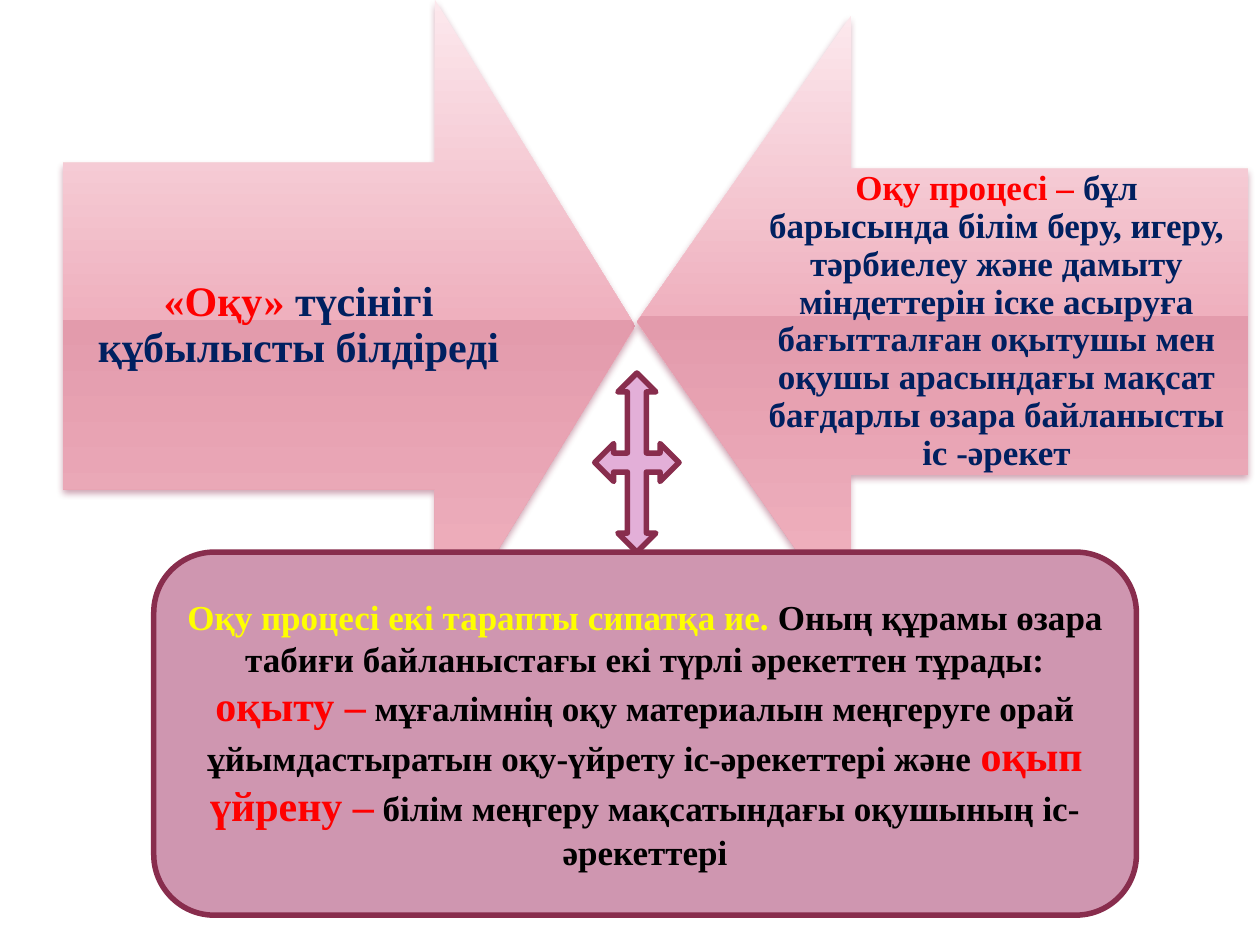
import lxml.etree
import pptx
import pptx.dml.color
import pptx.enum.shapes
import pptx.enum.text
import pptx.oxml
import pptx.oxml.ns
import pptx.util

Cm = pptx.util.Cm
Pt = pptx.util.Pt
SHAPES = pptx.enum.shapes.MSO_SHAPE

THEME = {
    "font": "Times New Roman",
    "large": Pt(24), "medium": Pt(20), "line": Pt(3.15),
    "red": "FF0000", "navy": "002060", "yellow": "FFFF00", "black": "000000",
    "panel": "CF96B0", "cross": "E3AFD8", "border": "882D4D", "shadow": "7F1238",
    "gradient": [(0, "FCE8ED"), (49, "EFB0BE"), (49, "E39BAC"), (92, "EFB0BE"), (100, "F0BEC9")],
}


def color(name):
    return pptx.dml.color.RGBColor.from_string(THEME[name])


def write_text(shape, runs, margin, line_spacing):
    frame = shape.text_frame
    frame_format = {
        "word_wrap": True, "vertical_anchor": pptx.enum.text.MSO_ANCHOR.MIDDLE,
        "margin_left": margin, "margin_right": margin,
    }
    if line_spacing != 1:
        frame_format.update(margin_top=margin, margin_bottom=margin)
    for name, value in frame_format.items():
        setattr(frame, name, value)
    paragraph = frame.paragraphs[0]
    paragraph.alignment = pptx.enum.text.PP_ALIGN.CENTER
    paragraph.line_spacing = line_spacing
    for text, size, color_name in runs:
        run = paragraph.add_run()
        run.text = text
        for name, value in {"name": THEME["font"], "size": THEME[size], "bold": True}.items():
            setattr(run.font, name, value)
        run.font.color.rgb = color(color_name)


presentation = pptx.Presentation()
presentation.slide_width = Cm(25.4)
presentation.slide_height = Cm(19.05)
slide = presentation.slides.add_slide(presentation.slide_layouts[6])

stops = "".join(
    f'<a:gs pos="{position * 1000}"><a:srgbClr val="{value}"/></a:gs>'
    for position, value in THEME["gradient"]
)
namespace = pptx.oxml.ns.nsdecls("a")
gradient_xml = (
    f'<a:gradFill {namespace} rotWithShape="0"><a:gsLst>{stops}</a:gsLst>'
    '<a:lin ang="5400000" scaled="0"/></a:gradFill>'
)
shadow_xml = (
    f'<a:effectLst {namespace}><a:outerShdw blurRad="50800" dist="25400" dir="5400000" '
    f'rotWithShape="0"><a:srgbClr val="{THEME["shadow"]}"><a:alpha val="38000"/>'
    '</a:srgbClr></a:outerShdw></a:effectLst>'
)

arrows = [
    {
        "box": (0.46, 0.81, 13.16, 11.53), "rotation": 270,
        "text_box": (1.27, 3.28, 9.5, 6.58), "margin": Cm(0.48),
        "runs": [
            ("«Оқу» ", "large", "red"),
            ("түсінігі құбылысты білдіреді", "large", "navy"),
        ],
    },
    {
        "box": (12.83, 0.33, 12.34, 12.32), "rotation": 90,
        "text_box": (15.01, 3.4, 10.16, 6.17), "margin": Cm(0.41),
        "runs": [
            ("Оқу процесі – ", "medium", "red"),
            ("бұл барысында білім беру, игеру, тəрбиелеу жəне дамыту міндеттерін іске асыруға "
             "бағытталған оқытушы мен оқушы арасындағы мақсат бағдарлы өзара байланысты "
             "іс -əрекет", "medium", "navy"),
        ],
    },
]
for arrow in arrows:
    shape = slide.shapes.add_shape(SHAPES.DOWN_ARROW, *map(Cm, arrow["box"]))
    shape.rotation = arrow["rotation"]
    shape.adjustments[0] = 0.5
    shape.adjustments[1] = 0.35
    shape.line.fill.background()
    properties = shape.element.spPr
    properties.find(pptx.oxml.ns.qn("a:ln")).addprevious(pptx.oxml.parse_xml(gradient_xml))
    properties.append(pptx.oxml.parse_xml(shadow_xml))
    text_box = slide.shapes.add_textbox(*map(Cm, arrow["text_box"]))
    write_text(text_box, arrow["runs"], arrow["margin"], 0.9)

outlined = [
    (SHAPES.ROUNDED_RECTANGLE, (3.1, 11.13, 19.81, 7.32), "panel", [
        ("Оқу процесі екі тарапты сипатқа ие. ", "medium", "yellow"),
        ("Оның құрамы өзара табиғи байланыстағы екі түрлі əрекеттен тұрады: ", "medium", "black"),
        ("оқыту –", "large", "red"),
        (" мұғалімнің оқу материалын меңгеруге орай ұйымдастыратын оқу-үйрету "
         "іс-əрекеттері жəне ", "medium", "black"),
        ("оқып үйрену –", "large", "red"),
        (" білім меңгеру мақсатындағы оқушының іс-əрекеттері", "medium", "black"),
    ]),
    (SHAPES.QUAD_ARROW, (11.99, 7.52, 1.7, 3.61), "cross", []),
]
for kind, box, fill, runs in outlined:
    shape = slide.shapes.add_shape(kind, *map(Cm, box))
    shape.shadow.inherit = False
    shape.fill.solid()
    shape.fill.fore_color.rgb = color(fill)
    shape.line.color.rgb = color("border")
    shape.line.width = THEME["line"]
    if runs:
        write_text(shape, runs, Cm(0.25), 1)

presentation.save("out.pptx")
